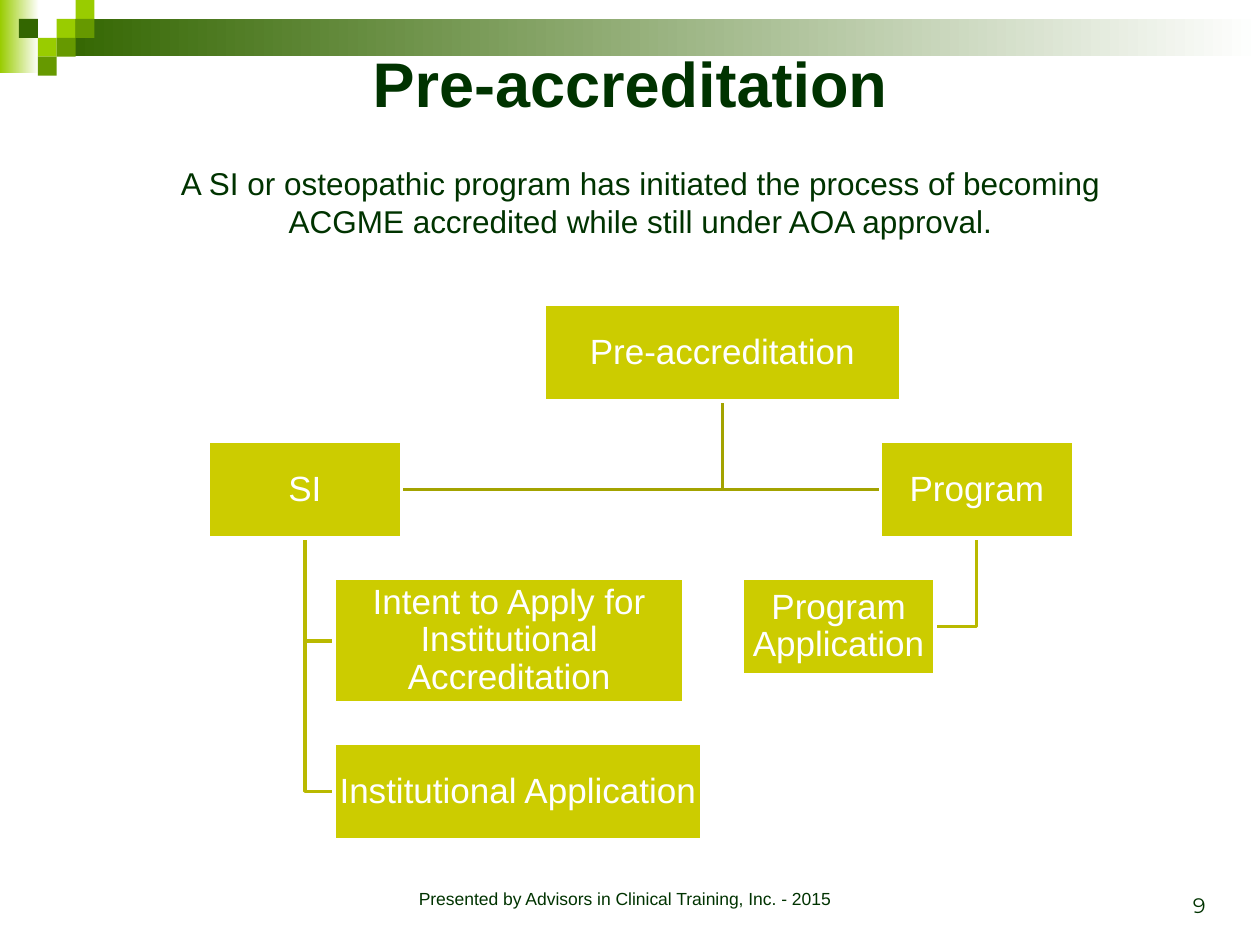
from pptx import Presentation
from pptx.dml.color import RGBColor
from pptx.enum.shapes import MSO_SHAPE
from pptx.enum.text import MSO_ANCHOR, PP_ALIGN
from pptx.util import Pt

RECT = MSO_SHAPE.RECTANGLE
TOP, MID, LOW = MSO_ANCHOR.TOP, MSO_ANCHOR.MIDDLE, MSO_ANCHOR.BOTTOM
MIDDLE, RIGHT = PP_ALIGN.CENTER, PP_ALIGN.RIGHT

HEX = {
    "white": "FFFFFF", "dark": "336600", "green": "669900", "lime": "99CC00",
    "ink": "003300", "box": "CCCC00", "upper": "A3A300", "lower": "B9B900",
}
RGB = {name: RGBColor.from_string(code) for name, code in HEX.items()}

deck = Presentation()
deck.slide_width, deck.slide_height = Pt(720), Pt(540)
slide = deck.slides.add_slide(deck.slide_layouts[6])
shapes = slide.shapes


def add_rect(x, y, w, h):
    rect = shapes.add_shape(RECT, Pt(x), Pt(y), Pt(w), Pt(h))
    rect.shadow.inherit = False
    rect.line.fill.background()
    return rect


def set_text(shape, text, size, color, anchor=TOP, align=MIDDLE, font="Arial"):
    frame = shape.text_frame
    frame.word_wrap = True
    frame.vertical_anchor = anchor
    frame.text = text
    para = frame.paragraphs[0]
    para.alignment = align
    run = para.runs[0]
    run.font.size = Pt(size)
    run.font.name = font
    run.font.color.rgb = RGB[color]
    return frame


# Fading bands along the top
for x, y, w, h, color in [(0, 0, 22.3, 41.8, "lime"),
                          (32.4, 10.8, 687.6, 21.4, "dark")]:
    fill = add_rect(x, y, w, h).fill
    fill.gradient()
    fill.gradient_angle = 0
    for stop, name in zip(fill.gradient_stops, (color, "white")):
        stop.color.rgb = RGB[name]

# Corner tiles, placed by column and row
TILE = 10.8
for col, row, color in [(3, 1, "lime"), (4, 0, "lime"), (4, 1, "green"),
                        (2, 2, "lime"), (1, 1, "dark"), (3, 2, "green"),
                        (2, 3, "green")]:
    tile = add_rect(col * TILE, row * TILE, TILE, TILE)
    tile.fill.solid()
    tile.fill.fore_color.rgb = RGB[color]

# Elbow lines: down from a parent, then across to a child
for x, y, end_x, end_y, color in [(558, 307, 534, 358, "lower"),
                                  (412.8, 229, 503, 279.7, "upper"),
                                  (174.2, 307, 191, 452.2, "lower"),
                                  (174.2, 307, 191, 366.2, "lower"),
                                  (412.8, 229, 229.5, 279.7, "upper")]:
    path = shapes.build_freeform(Pt(x), Pt(y))
    path.add_line_segments([(Pt(x), Pt(end_y)), (Pt(end_x), Pt(end_y))],
                           close=False)
    elbow = path.convert_to_shape()
    elbow.shadow.inherit = False
    elbow.fill.background()
    elbow.line.color.rgb = RGB[color]
    elbow.line.width = Pt(2)

# Chart boxes
for text, x, y, w, h in [
        ("Pre-accreditation", 311, 174, 203.5, 55.2),
        ("SI", 119, 252.2, 110.4, 55.2),
        ("Intent to Apply for Institutional Accreditation",
         191, 330.5, 200, 71.2),
        ("Institutional Application", 191, 424.8, 210, 55.2),
        ("Program", 503, 252.2, 110.4, 55.2),
        ("Program Application", 424, 330.5, 110.4, 55.2)]:
    box = add_rect(x, y, w, h)
    box.fill.solid()
    box.fill.fore_color.rgb = RGB["box"]
    box.line.color.rgb = RGB["white"]
    box.line.width = Pt(2)
    frame = set_text(box, text, 20, "white", MID)
    frame.margin_left = frame.margin_right = Pt(0.9)
    frame.margin_top = frame.margin_bottom = Pt(0.9)
    frame.paragraphs[0].line_spacing = 0.9

# Title, lead, footer and slide number
title = shapes.add_textbox(Pt(36), Pt(2), Pt(648), Pt(90))
frame = set_text(title, "Pre-accreditation", 36, "ink", MID)
frame.paragraphs[0].runs[0].font.bold = True

lead = shapes.add_textbox(Pt(90), Pt(90), Pt(552), Pt(51))
set_text(lead, "A SI or osteopathic program has initiated the process of "
         "becoming ACGME accredited while still under AOA approval.",
         18, "ink")

foot = shapes.add_textbox(Pt(198), Pt(504), Pt(318), Pt(24))
set_text(foot, "Presented by Advisors in Clinical Training, Inc. - 2015",
         10, "ink")

number = shapes.add_textbox(Pt(528), Pt(492), Pt(168), Pt(36))
set_text(number, "9", 12, "ink", LOW, RIGHT, "Montserrat")

deck.save("out.pptx")
